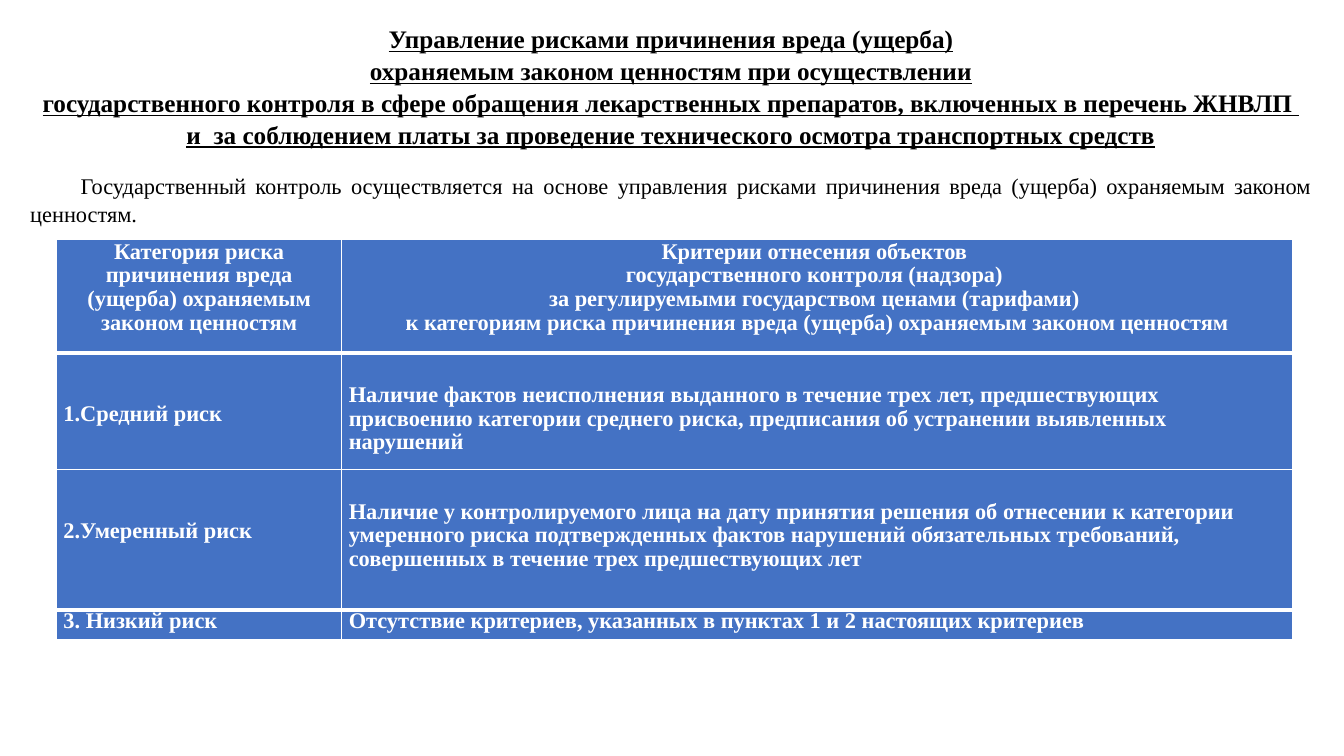
"""Build a slide on risk categories in state price control."""
from lxml import etree
from pptx import Presentation
from pptx.dml.color import RGBColor
from pptx.enum.text import MSO_ANCHOR, MSO_AUTO_SIZE, PP_ALIGN
from pptx.oxml.ns import qn
from pptx.util import Inches, Pt

CENTER, LEFT, JUSTIFY = PP_ALIGN.CENTER, PP_ALIGN.LEFT, PP_ALIGN.JUSTIFY
TOP = MSO_ANCHOR.TOP
NO_FIT = MSO_AUTO_SIZE.NONE
COLORS = {"text": "000000", "cell": "4472C4", "light": "FFFFFF"}
FONT = "Times New Roman"

TITLE = (
    "Управление рисками причинения вреда (ущерба)\v"
    "охраняемым законом ценностям при осуществлении\v"
    "государственного контроля в сфере обращения лекарственных препаратов, "
    "включенных в перечень ЖНВЛП \v"
    "и  за соблюдением платы за проведение технического осмотра транспортных средств"
)
INTRO = (
    "Государственный контроль осуществляется на основе управления рисками "
    "причинения вреда (ущерба) охраняемым законом ценностям."
)
RISKS = [
    ("Категория риска причинения вреда (ущерба) охраняемым законом ценностям",
     "Критерии отнесения объектов \v"
     "государственного контроля (надзора) \v"
     "за регулируемыми государством ценами (тарифами) \v"
     "к категориям риска причинения вреда (ущерба) охраняемым законом ценностям"),
    ("1.Средний риск",
     "Наличие фактов неисполнения выданного в течение трех лет, предшествующих "
     "присвоению категории среднего риска, предписания об устранении выявленных нарушений"),
    ("2.Умеренный риск",
     "Наличие у контролируемого лица на дату принятия решения об отнесении к категории "
     "умеренного риска подтвержденных фактов нарушений обязательных требований, "
     "совершенных в течение трех предшествующих лет"),
    ("3. Низкий риск",
     "Отсутствие критериев, указанных в пунктах 1 и 2 настоящих критериев"),
]
COLUMN_WIDTHS = [2.83, 9.43]
ROW_HEIGHTS = [1.12, 1.16, 1.39, 0.3]
TEXT_OFFSETS = [(0, 0), (0.49, 0.3), (0.49, 0.3), (0, 0)]
BORDER_WIDTHS = [1, 3, 1, 3, 1]


def set_values(target, values):
    """Set attributes of an object from a dict."""
    for name, value in values.items():
        setattr(target, name, value)


def format_text(text_frame, text, color, alignment, spacing, font):
    """Write one paragraph with its font and spacing."""
    text_frame.text = text
    paragraph = text_frame.paragraphs[0]
    set_values(paragraph, {"alignment": alignment, "line_spacing": spacing,
                           "space_before": Pt(0), "space_after": Pt(0)})
    for run in paragraph.runs:
        set_values(run.font, {"name": FONT, **font})
        run.font.color.rgb = RGBColor.from_string(COLORS[color])
    return paragraph


def fill_placeholder(placeholder, top, height, text, alignment, font):
    """Move a placeholder across the slide and fill it."""
    set_values(placeholder, {"left": Inches(0.2), "top": Inches(top),
                             "width": Inches(12.91), "height": Inches(height)})
    set_values(placeholder.text_frame, {"word_wrap": True, "auto_size": NO_FIT,
                                        "vertical_anchor": TOP})
    return format_text(placeholder.text_frame, text, "text", alignment, 1.05, font)


def indent_first_line(paragraph, indent):
    """Drop the bullet and indent the first line."""
    properties = paragraph._p.get_or_add_pPr()
    properties.set("marL", "0")
    properties.set("indent", str(Inches(indent)))
    etree.SubElement(properties, qn("a:buNone"))


def set_borders(cell, widths):
    """Draw the borders of a cell with a width in points for each side."""
    properties = cell._tc.get_or_add_tcPr()
    for position, (side, width) in enumerate(widths.items()):
        line = etree.Element(qn("a:" + side), w=str(Pt(width)))
        fill = etree.SubElement(line, qn("a:solidFill"))
        etree.SubElement(fill, qn("a:srgbClr"), val=COLORS["light"])
        properties.insert(position, line)


def add_risk_table(slide):
    """Add the table of risk categories and their criteria."""
    frame = slide.shapes.add_table(
        len(RISKS), len(COLUMN_WIDTHS), Inches(0.56), Inches(2.38),
        Inches(sum(COLUMN_WIDTHS)), Inches(sum(ROW_HEIGHTS)))
    table = frame.table
    for column, width in zip(table.columns, COLUMN_WIDTHS):
        column.width = Inches(width)
    for row_index, texts in enumerate(RISKS):
        table.rows[row_index].height = Inches(ROW_HEIGHTS[row_index])
        for column_index, text in enumerate(texts):
            cell = table.cell(row_index, column_index)
            offset = TEXT_OFFSETS[row_index][column_index]
            set_values(cell, {"margin_left": Inches(0.07), "margin_right": Inches(0.07),
                              "margin_top": Inches(offset), "margin_bottom": 0,
                              "vertical_anchor": TOP})
            cell.fill.solid()
            cell.fill.fore_color.rgb = RGBColor.from_string(COLORS["cell"])
            format_text(cell.text_frame, text, "light", LEFT if row_index else CENTER,
                        0.96, {"size": Pt(16), "bold": True})
            set_borders(cell, {"lnL": 1, "lnR": 1, "lnT": BORDER_WIDTHS[row_index],
                               "lnB": BORDER_WIDTHS[row_index + 1]})


def main():
    """Build and save the slide."""
    presentation = Presentation()
    set_values(presentation, {"slide_width": Inches(13.33), "slide_height": Inches(7.5)})
    slide = presentation.slides.add_slide(presentation.slide_layouts[1])
    fill_placeholder(slide.shapes.title, 0.17, 1.35, TITLE, CENTER,
                     {"size": Pt(18), "bold": True, "underline": True})
    intro = fill_placeholder(slide.placeholders[1], 1.64, 0.65, INTRO, JUSTIFY,
                             {"size": Pt(16), "bold": False})
    indent_first_line(intro, 0.5)
    add_risk_table(slide)
    presentation.save("out.pptx")


if __name__ == "__main__":
    main()
